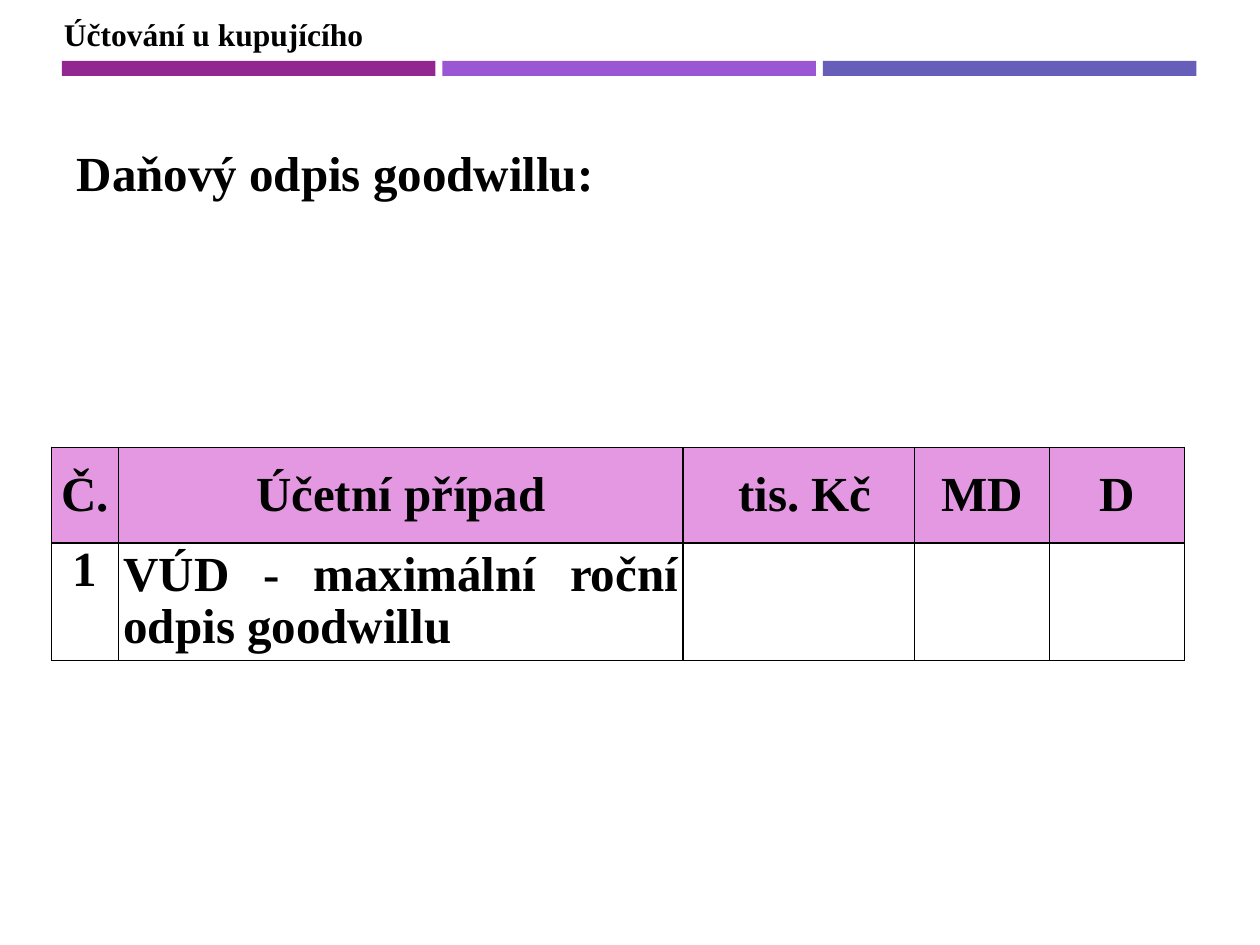
from lxml.etree import SubElement
from pptx import Presentation
from pptx.dml.color import RGBColor
from pptx.enum.shapes import MSO_SHAPE
from pptx.enum.text import MSO_ANCHOR, MSO_AUTO_SIZE, PP_ALIGN
from pptx.oxml.ns import qn
from pptx.util import Cm, Pt

BLACK = RGBColor(0x00, 0x00, 0x00)
PINK = RGBColor(0xE4, 0x98, 0xE1)
PLUM = RGBColor(0x92, 0x27, 0x8F)
VIOLET = RGBColor(0x9B, 0x57, 0xD3)
INDIGO = RGBColor(0x66, 0x5E, 0xB8)


def write(tf, text, size=28, align=PP_ALIGN.LEFT, spacing=None):
    p = tf.paragraphs[0]
    p.alignment = align
    if spacing:
        p.line_spacing = spacing
    r = p.add_run()
    r.text = text
    r.font.name = "Times New Roman"
    r.font.size = Pt(size)
    r.font.bold = True
    r.font.color.rgb = BLACK


def add_borders(cell):
    tc_pr = cell._tc.get_or_add_tcPr()
    for side in ("a:lnL", "a:lnR", "a:lnT", "a:lnB"):
        ln = SubElement(tc_pr, qn(side), w=str(Pt(1)))
        fill = SubElement(ln, qn("a:solidFill"))
        SubElement(fill, qn("a:srgbClr"), val=str(BLACK))


class SlideBuilder:
    def __init__(self, s):
        self.s = s

    def bar(self, left, top, width, height, color):
        sp = self.s.shapes.add_shape(
            MSO_SHAPE.RECTANGLE, Cm(left), Cm(top), Cm(width), Cm(height))
        sp.shadow.inherit = False
        sp.fill.solid()
        sp.fill.fore_color.rgb = color
        sp.line.fill.background()

    def label(self, left, top, width, height, text, size):
        sp = self.s.shapes.add_textbox(Cm(left), Cm(top), Cm(width), Cm(height))
        tf = sp.text_frame
        tf.word_wrap = False
        tf.auto_size = MSO_AUTO_SIZE.SHAPE_TO_FIT_TEXT
        write(tf, text, size=size)

    def table(self, left, top, widths, heights):
        table = self.s.shapes.add_table(
            len(heights), len(widths), Cm(left), Cm(top),
            Cm(sum(widths)), Cm(sum(heights))).table
        table.first_row = table.horz_banding = False
        for column, width in zip(table.columns, widths):
            column.width = Cm(width)
        for row, height in zip(table.rows, heights):
            row.height = Cm(height)
        for cell in table.iter_cells():
            cell.margin_left = cell.margin_right = Cm(0.1)
            cell.margin_top = cell.margin_bottom = 0
            add_borders(cell)
            cell.fill.background()
        return table


def main():
    prs = Presentation()
    prs.slide_width, prs.slide_height = Cm(25.4), Cm(19.05)
    b = SlideBuilder(prs.slides.add_slide(prs.slide_layouts[6]))

    for i, color in enumerate((PLUM, VIOLET, INDIGO)):
        b.bar(1.25 + i * 7.67, 1.23, 7.53, 0.3, color)
    b.label(1.04, 0.18, 6.6, 1.02, "Účtování u kupujícího", 18)

    table = b.table(1.04, 9.02, (1.35, 11.38, 4.67, 2.72, 2.72), (1.93, 2.36))
    for i, heading in enumerate(("Č.", "Účetní případ", " tis. Kč", "MD", "D")):
        cell = table.cell(0, i)
        cell.fill.solid()
        cell.fill.fore_color.rgb = PINK
        cell.vertical_anchor = MSO_ANCHOR.MIDDLE
        write(cell.text_frame, heading, align=PP_ALIGN.CENTER)
    write(table.cell(1, 0).text_frame, "1", align=PP_ALIGN.CENTER)
    entry = table.cell(1, 1)
    entry.vertical_anchor = MSO_ANCHOR.MIDDLE
    write(entry.text_frame, "VÚD - maximální roční odpis goodwillu",
          align=PP_ALIGN.JUSTIFY, spacing=0.96)

    b.label(1.3, 2.74, 11.05, 1.45, "Daňový odpis goodwillu:", 28)
    prs.save("out.pptx")


if __name__ == "__main__":
    main()
